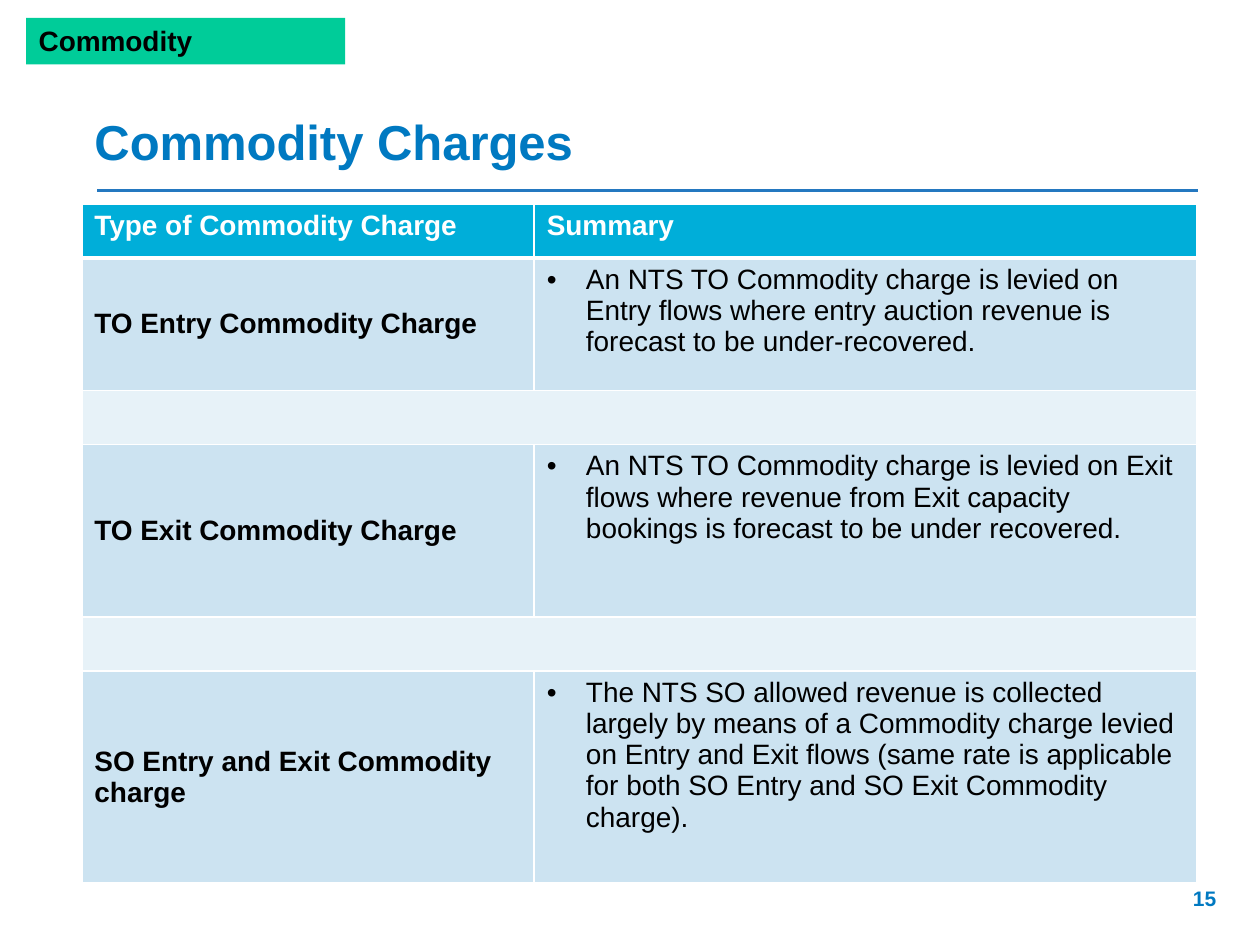
from dataclasses import dataclass
from typing import Optional

from lxml import etree
from pptx import Presentation
from pptx.dml.color import RGBColor
from pptx.enum.shapes import MSO_CONNECTOR, MSO_SHAPE
from pptx.enum.text import MSO_ANCHOR, PP_ALIGN
from pptx.oxml.ns import qn
from pptx.util import Cm, Pt

STRAIGHT = MSO_CONNECTOR.STRAIGHT
RECTANGLE = MSO_SHAPE.RECTANGLE
TOP, MIDDLE, BOTTOM = MSO_ANCHOR.TOP, MSO_ANCHOR.MIDDLE, MSO_ANCHOR.BOTTOM
LEFT, RIGHT = PP_ALIGN.LEFT, PP_ALIGN.RIGHT


@dataclass(frozen=True)
class Theme:
    font: str = "Arial"
    title_size: int = 28
    body_size: int = 16
    number_size: int = 12
    blue: str = "0079C1"
    rule: str = "2478C0"
    header: str = "00AED9"
    band: str = "CCE3F1"
    spacer: str = "E7F2F8"
    tag: str = "00CC99"
    white: str = "FFFFFF"
    black: str = "000000"


@dataclass(frozen=True)
class Box:
    left: float
    top: float
    width: float
    height: float

    def lengths(self) -> tuple:
        return Cm(self.left), Cm(self.top), Cm(self.width), Cm(self.height)


@dataclass(frozen=True)
class Charge:
    name: str
    summary: str
    height: float


THEME = Theme()
TABLE_BOX = Box(1.65, 4.11, 22.48, 13.67)
COLUMN_WIDTHS = (9.12, 13.36)
THIN_ROW = 1.09
BULLET_INDENT = Cm(0.79)
CHARGES = (
    Charge("TO Entry Commodity Charge",
           "An NTS TO Commodity charge is levied on Entry flows where entry auction "
           "revenue is forecast to be under-recovered.", 2.67),
    Charge("TO Exit Commodity Charge",
           "An NTS TO Commodity charge is levied on Exit flows where revenue from Exit "
           "capacity bookings is forecast to be under recovered.", 3.48),
    Charge("SO Entry and Exit Commodity charge",
           "The NTS SO allowed revenue is collected largely by means of a Commodity "
           "charge levied on Entry and Exit flows (same rate is applicable for both SO "
           "Entry and SO Exit Commodity charge).", 4.27),
)


def rgb(value: str) -> RGBColor:
    return RGBColor.from_string(value)


def write(frame, text: str, size: int, color: str, bold: bool = True,
          align: Optional[PP_ALIGN] = LEFT) -> None:
    frame.text = text
    paragraph = frame.paragraphs[0]
    paragraph.alignment = align
    for run in paragraph.runs:
        run.font.name = THEME.font
        run.font.size = Pt(size)
        run.font.bold = bold
        run.font.color.rgb = rgb(color)


def add_bullet(paragraph) -> None:
    properties = paragraph._p.get_or_add_pPr()
    properties.set("marL", str(BULLET_INDENT))
    properties.set("indent", str(-BULLET_INDENT))
    etree.SubElement(properties, qn("a:buFont"), typeface=THEME.font)
    etree.SubElement(properties, qn("a:buChar"), char="•")


def set_borders(cell, top: int = 1, bottom: int = 1) -> None:
    properties = cell._tc.get_or_add_tcPr()
    for side, width in (("L", 1), ("R", 1), ("T", top), ("B", bottom)):
        border = etree.SubElement(properties, qn(f"a:ln{side}"), w=str(Pt(width)))
        fill = etree.SubElement(border, qn("a:solidFill"))
        etree.SubElement(fill, qn("a:srgbClr"), val=THEME.white)


def paint(cell, color: str, anchor: MSO_ANCHOR = TOP, top: int = 1, bottom: int = 1) -> None:
    set_borders(cell, top, bottom)
    cell.fill.solid()
    cell.fill.fore_color.rgb = rgb(color)
    cell.vertical_anchor = anchor


def add_title(slide) -> None:
    title = slide.shapes.title
    title.left, title.top, title.width, title.height = Box(1.65, 2.11, 22.48, 1.45).lengths()
    write(title.text_frame, "Commodity Charges", THEME.title_size, THEME.blue)
    title.text_frame.vertical_anchor = BOTTOM


def add_title_rule(slide) -> None:
    rule = slide.shapes.add_connector(STRAIGHT, Cm(1.96), Cm(3.84), Cm(24.16), Cm(3.84))
    rule.line.color.rgb = rgb(THEME.rule)
    rule.line.width = Pt(1.5)
    etree.SubElement(rule._element.spPr, qn("a:effectLst"))


def fill_charge(table, row: int, charge: Charge) -> None:
    table.rows[row].height = Cm(charge.height)
    name, summary = table.cell(row, 0), table.cell(row, 1)
    top = 3 if row == 1 else 1
    paint(name, THEME.band, MIDDLE, top)
    paint(summary, THEME.band, TOP, top)
    write(name.text_frame, charge.name, THEME.body_size, THEME.black)
    write(summary.text_frame, charge.summary, THEME.body_size, THEME.black, False)
    add_bullet(summary.text_frame.paragraphs[0])


def fill_spacer(table, row: int) -> None:
    table.rows[row].height = Cm(THIN_ROW)
    first, last = table.cell(row, 0), table.cell(row, 1)
    first.merge(last)
    for cell in (first, last):
        paint(cell, THEME.spacer)
        cell.text_frame.paragraphs[0].font.size = Pt(THEME.body_size)


def add_charges_table(slide) -> None:
    table = slide.shapes.add_table(2 * len(CHARGES), 2, *TABLE_BOX.lengths()).table
    for column, width in zip(table.columns, COLUMN_WIDTHS):
        column.width = Cm(width)
    table.rows[0].height = Cm(THIN_ROW)
    for cell, heading in zip(table.rows[0].cells, ("Type of Commodity Charge", "Summary")):
        paint(cell, THEME.header, bottom=3)
        write(cell.text_frame, heading, THEME.body_size, THEME.white)
    for index, charge in enumerate(CHARGES):
        fill_charge(table, 2 * index + 1, charge)
        if index:
            fill_spacer(table, 2 * index)


def add_page_number(slide) -> None:
    number = slide.shapes.add_textbox(*Box(18.85, 17.73, 5.92, 1.02).lengths())
    number.text_frame.word_wrap = True
    write(number.text_frame, "15", THEME.number_size, THEME.blue, align=RIGHT)


def add_section_tag(slide) -> None:
    tag = slide.shapes.add_shape(RECTANGLE, *Box(0.53, 0.36, 6.43, 0.94).lengths())
    tag.shadow.inherit = False
    tag.fill.solid()
    tag.fill.fore_color.rgb = rgb(THEME.tag)
    tag.line.fill.background()
    tag.text_frame.vertical_anchor = TOP
    write(tag.text_frame, "Commodity", THEME.body_size, THEME.black)


def main() -> None:
    presentation = Presentation()
    presentation.slide_width, presentation.slide_height = Cm(25.4), Cm(19.05)
    slide = presentation.slides.add_slide(presentation.slide_layouts[5])
    add_title_rule(slide)
    add_title(slide)
    add_charges_table(slide)
    add_page_number(slide)
    add_section_tag(slide)
    presentation.save("out.pptx")


if __name__ == "__main__":
    main()
